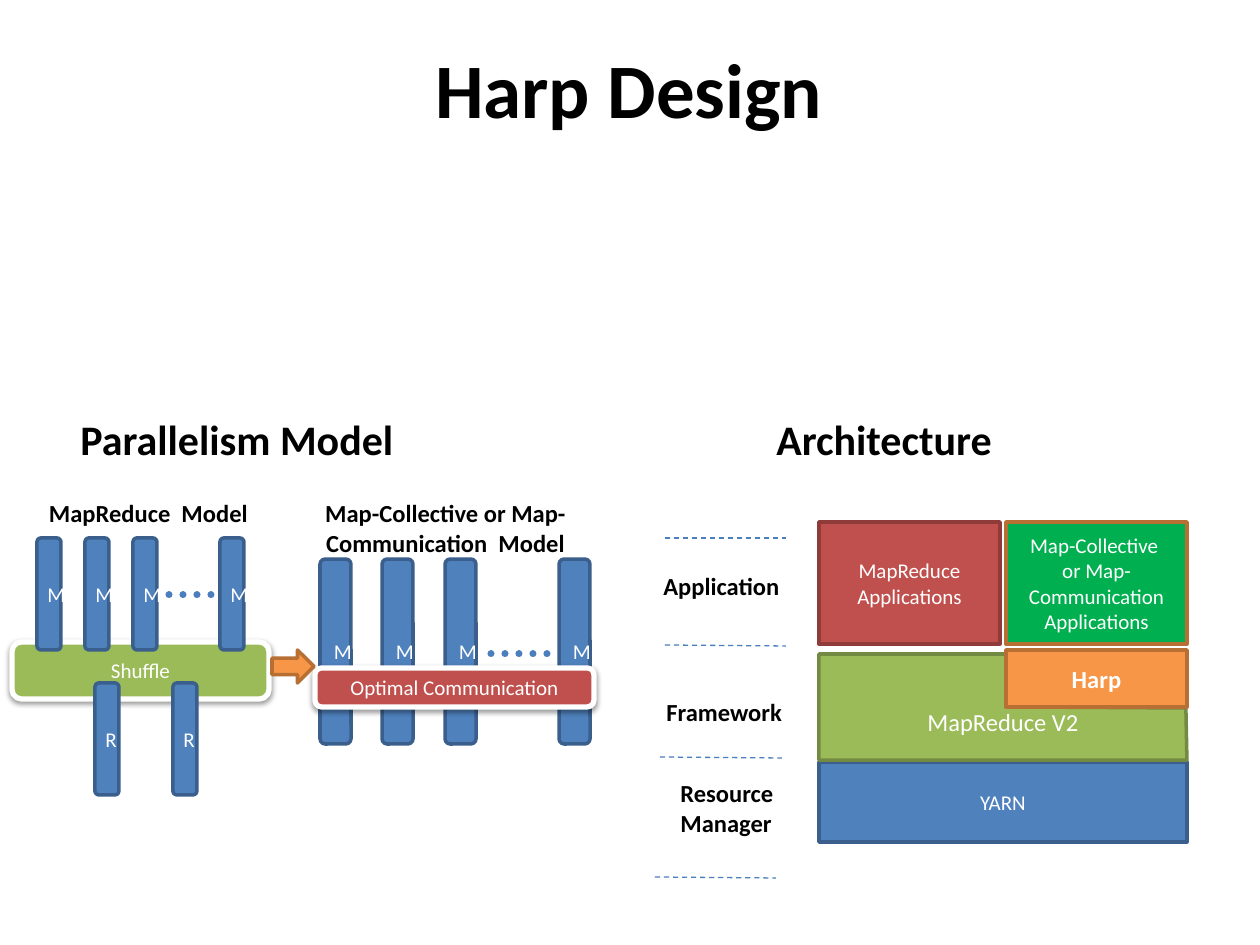
from dataclasses import dataclass

from lxml import etree
from pptx import Presentation
from pptx.dml.color import RGBColor
from pptx.enum.dml import MSO_LINE
from pptx.enum.shapes import MSO_CONNECTOR, MSO_SHAPE
from pptx.enum.text import MSO_ANCHOR, PP_ALIGN
from pptx.oxml.ns import qn
from pptx.util import Emu, Pt

RECT, ROUND, ARROW = MSO_SHAPE.RECTANGLE, MSO_SHAPE.ROUNDED_RECTANGLE, MSO_SHAPE.RIGHT_ARROW
STRAIGHT = MSO_CONNECTOR.STRAIGHT
DOT, DASH = MSO_LINE.ROUND_DOT, MSO_LINE.DASH
TOP, MIDDLE, BOTTOM = MSO_ANCHOR.TOP, MSO_ANCHOR.MIDDLE, MSO_ANCHOR.BOTTOM
LEFT, CENTER = PP_ALIGN.LEFT, PP_ALIGN.CENTER

SCALE = 914400 / 126
FONT = "Calibri"
BLACK, WHITE = "000000", "FFFFFF"
BLUE, NAVY, LINE_BLUE = "4F81BD", "3A5F8C", "4B7EBC"
GREEN, OLIVE, BRIGHT_GREEN = "9BBB59", "738A42", "00B050"
RED, MAROON = "C0504D", "8E3B39"
ORANGE, BROWN = "F79646", "B76F34"


@dataclass
class Block:
    x: int
    y: int
    w: int
    h: int
    fill: str
    line: str
    text: str = ""
    kind: int = RECT
    size: int = 12
    bold: bool = False
    weight: int = 2
    shadow: bool = False


@dataclass
class Label:
    x: int
    y: int
    w: int
    h: int
    text: str
    size: int = 14
    align: int = LEFT
    anchor: int = TOP


@dataclass
class Rule:
    x1: int
    y1: int
    x2: int
    y2: int
    weight: float = 0.75
    dash: int = DASH


def px(n: int) -> Emu:
    return Emu(round(n * SCALE))


def rgb(color: str) -> RGBColor:
    return RGBColor.from_string(color)


def write(sp, text: str, size: int, color: str, bold: bool, align: int, anchor: int) -> None:
    tf = sp.text_frame
    tf.word_wrap = True
    tf.vertical_anchor = anchor
    tf.text = text
    p = tf.paragraphs[0]
    p.alignment = align
    for r in p.runs:
        r.font.name = FONT
        r.font.size = Pt(size)
        r.font.bold = bold
        r.font.color.rgb = rgb(color)


def paint(sp, fill: str, line: str, weight: int = 2) -> None:
    sp.shadow.inherit = False
    sp.fill.solid()
    sp.fill.fore_color.rgb = rgb(fill)
    sp.line.color.rgb = rgb(line)
    sp.line.width = Pt(weight)


def cast_shadow(sp) -> None:
    effects = sp._element.spPr.find(qn("a:effectLst"))
    shadow = etree.SubElement(effects, qn("a:outerShdw"), blurRad="40000",
                              dist="20000", dir="5400000", rotWithShape="0")
    color = etree.SubElement(shadow, qn("a:srgbClr"), val=BLACK)
    etree.SubElement(color, qn("a:alpha"), val="38000")


def add_block(s, b: Block) -> None:
    sp = s.shapes.add_shape(b.kind, px(b.x), px(b.y), px(b.w), px(b.h))
    paint(sp, b.fill, b.line, b.weight)
    if b.shadow:
        cast_shadow(sp)
    if b.text:
        write(sp, b.text, b.size, WHITE, b.bold, CENTER, MIDDLE)


def add_tasks(s, xs: tuple[int, ...], y: int, w: int, h: int, text: str) -> None:
    for x in xs:
        add_block(s, Block(x, y, w, h, BLUE, NAVY, text, ROUND))


def add_label(s, b: Label) -> None:
    sp = s.shapes.add_textbox(px(b.x), px(b.y), px(b.w), px(b.h))
    write(sp, b.text, b.size, BLACK, True, b.align, b.anchor)


def add_rule(s, c: Rule) -> None:
    sp = s.shapes.add_connector(STRAIGHT, px(c.x1), px(c.y1), px(c.x2), px(c.y2))
    sp.line.color.rgb = rgb(LINE_BLUE)
    sp.line.width = Pt(c.weight)
    sp.line.dash_style = c.dash
    if c.dash == DOT:
        sp.line._get_or_add_ln().set("cap", "rnd")
    etree.SubElement(sp._element.spPr, qn("a:effectLst"))


def add_framework(s) -> None:
    fb = s.shapes.build_freeform(819, 654, scale=SCALE)
    fb.add_line_segments([(1018, 654), (1027, 707), (1186, 708), (1187, 760), (819, 760)])
    sp = fb.convert_to_shape()
    paint(sp, GREEN, OLIVE)
    write(sp, "MapReduce V2", 14, WHITE, False, CENTER, MIDDLE)
    sp.text_frame.margin_top = px(36)


def main() -> None:
    prs = Presentation()
    prs.slide_width, prs.slide_height = px(1260), px(945)
    s = prs.slides.add_slide(prs.slide_layouts[5])

    title = s.shapes.title
    title.left, title.top, title.width, title.height = px(62), px(9), px(1134), px(157)
    write(title, "Harp Design", 44, BLACK, True, CENTER, MIDDLE)
    add_label(s, Label(68, 382, 557, 88, "Parallelism Model", 24, anchor=BOTTOM))
    add_label(s, Label(764, 382, 438, 88, "Architecture", 24, anchor=BOTTOM))

    add_block(s, Block(12, 642, 257, 57, GREEN, WHITE, "Shuffle", ROUND, weight=3, shadow=True))
    add_tasks(s, (320, 382, 445, 559), 559, 31, 185, "M")
    add_rule(s, Rule(491, 654, 548, 654, 4, DOT))
    add_block(s, Block(315, 668, 279, 39, RED, WHITE, "Optimal Communication", ROUND,
                       weight=3, shadow=True))
    add_tasks(s, (37, 85, 133, 220), 538, 24, 112, "M")
    add_rule(s, Rule(169, 595, 213, 595, 4, DOT))
    add_tasks(s, (95, 173), 683, 24, 112, "R")
    add_block(s, Block(272, 650, 42, 33, ORANGE, BROWN, kind=ARROW))
    add_label(s, Label(310, 492, 271, 72, "Map-Collective or Map-Communication  Model",
                       align=CENTER))
    add_label(s, Label(22, 492, 253, 43, "MapReduce  Model", align=CENTER))

    add_block(s, Block(819, 762, 368, 80, BLUE, NAVY, "YARN"))
    add_framework(s)
    add_block(s, Block(1006, 650, 181, 57, ORANGE, BROWN, "Harp", size=14, bold=True))
    add_block(s, Block(819, 522, 181, 122, RED, MAROON, "MapReduce Applications"))
    add_block(s, Block(1006, 522, 181, 122, BRIGHT_GREEN, BROWN,
                       "Map-Collective \vor Map-Communication Applications"))

    for label in (Label(651, 565, 150, 47, "Application"),
                  Label(654, 691, 151, 47, "Framework"),
                  Label(668, 772, 140, 79, "Resource Manager")):
        add_label(s, label)
    for rule in (Rule(665, 645, 786, 646), Rule(665, 538, 786, 538),
                 Rule(660, 757, 782, 758), Rule(655, 877, 776, 878)):
        add_rule(s, rule)

    prs.save("out.pptx")


if __name__ == "__main__":
    main()
